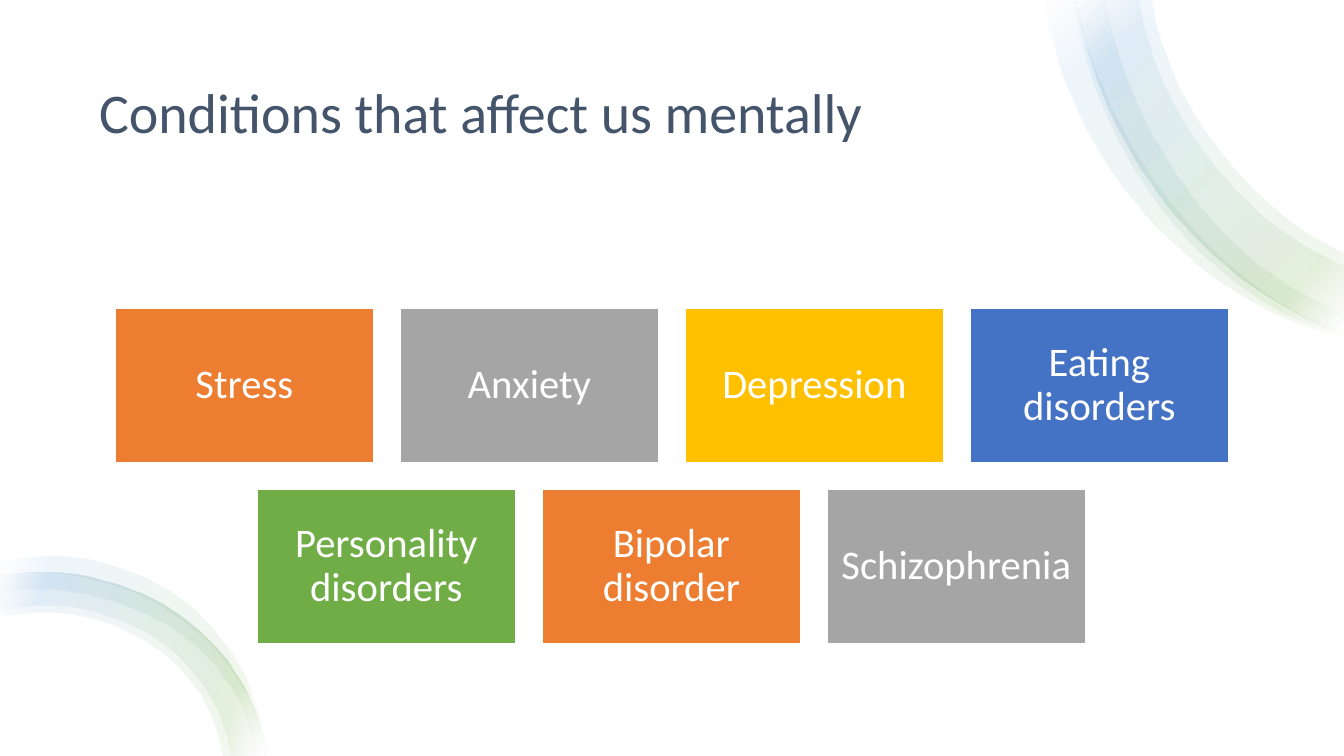
import dataclasses

import pptx
import pptx.dml.color
import pptx.enum.shapes
import pptx.enum.text
import pptx.oxml
import pptx.oxml.ns
import pptx.util

SCALE = 914400 / 100.8
WIDE, HIGH = 1344, 756


@dataclasses.dataclass(frozen=True)
class Theme:
    """Colours, font and type sizes of the slide."""
    font: str = "Calibri"
    head: int = 40
    body: int = 29
    ink: str = "44546A"
    white: str = "FFFFFF"
    orange: str = "ED7D31"
    grey: str = "A5A5A5"
    gold: str = "FFC000"
    blue: str = "4472C4"
    green: str = "70AD47"
    sky: str = "5B9BD5"
    alpha: int = 10


THEME = Theme()

ROWS = [
    [("Stress", THEME.orange), ("Anxiety", THEME.grey),
     ("Depression", THEME.gold), ("Eating disorders", THEME.blue)],
    [("Personality disorders", THEME.green), ("Bipolar disorder", THEME.orange),
     ("Schizophrenia", THEME.grey)],
]

TOP_BANDS = [
    ([(1045, 0), (1066, 155), (1189, 300), (1344, 338)],
     [(1078, 0), (1099, 136), (1215, 292), (1344, 331)]),
    ([(1077, 0), (1101, 147), (1199, 282), (1344, 335)],
     [(1152, 0), (1169, 116), (1268, 222), (1344, 253)]),
    ([(1074, 0), (1097, 156), (1202, 297), (1344, 336)],
     [(1107, 0), (1129, 144), (1238, 280), (1344, 310)]),
    ([(1077, 0), (1101, 147), (1199, 282), (1344, 335)],
     [(1140, 0), (1158, 129), (1263, 235), (1344, 266)]),
]

RIM = [(0, 577), (116, 553), (252, 630), (265, 756)]
LOW_BANDS = [
    (RIM, [(0, 618), (96, 595), (207, 651), (222, 756)]),
    (RIM, [(0, 611), (98, 588), (214, 645), (230, 756)]),
    (RIM, [(0, 593), (111, 573), (246, 645), (253, 756)]),
    ([(0, 563), (126, 534), (254, 617), (266, 756)],
     [(0, 577), (116, 556), (250, 634), (264, 756)]),
]


def px(num):
    """Turn pixels into EMU."""
    return pptx.util.Emu(round(num * SCALE))


def rgb(code):
    """Turn a hex code into a colour."""
    return pptx.dml.color.RGBColor.from_string(code)


def style(frame, size, color, align):
    """Format the text of a frame."""
    frame.word_wrap = True
    frame.vertical_anchor = pptx.enum.text.MSO_ANCHOR.MIDDLE
    for para in frame.paragraphs:
        para.alignment = align
        para.line_spacing = 0.9
        for run in para.runs:
            run.font.name = THEME.font
            run.font.size = pptx.util.Pt(size)
            run.font.color.rgb = rgb(color)


def add_title(slide, text):
    """Place and fill the title."""
    title = slide.shapes.title
    title.left, title.top = px(89), px(50)
    title.width, title.height = px(1166), px(131)
    title.text_frame.text = text
    style(title.text_frame, THEME.head, THEME.ink,
          pptx.enum.text.PP_ALIGN.LEFT)


def curve(ctrl, steps=32):
    """Return points along a cubic Bezier curve."""
    points = []
    for step in range(steps + 1):
        t = step / steps
        mix = ((1 - t) ** 3, 3 * t * (1 - t) ** 2, 3 * t * t * (1 - t), t ** 3)
        points.append(tuple(sum(m * p[axis] for m, p in zip(mix, ctrl))
                            for axis in (0, 1)))
    return points


def shade(shape, angle):
    """Give a shape the pale blue to green gradient."""
    shape.fill.gradient()
    shape.fill.gradient_angle = angle
    stops = next(shape.element.iter(pptx.oxml.ns.qn("a:gsLst")))
    for stop in list(stops):
        stops.remove(stop)
    space = pptx.oxml.ns.nsdecls("a")
    for place, color in ((0, THEME.white), (15, THEME.sky),
                         (84, THEME.green), (98, THEME.white)):
        stops.append(pptx.oxml.parse_xml(
            f'<a:gs {space} pos="{place * 1000}"><a:srgbClr val="{color}">'
            f'<a:alpha val="{THEME.alpha * 1000}"/></a:srgbClr></a:gs>'))


def add_band(slide, outer, inner, angle):
    """Draw a curved band between two edges."""
    points = curve(outer) + curve(inner)[::-1]
    pen = slide.shapes.build_freeform(*points[0], scale=SCALE)
    pen.add_line_segments(points[1:], close=True)
    band = pen.convert_to_shape()
    band.shadow.inherit = False
    band.line.fill.background()
    shade(band, angle)


def add_tile(slide, text, color, left, top, wide, high):
    """Draw one coloured tile with its label."""
    tile = slide.shapes.add_shape(pptx.enum.shapes.MSO_SHAPE.RECTANGLE,
                                  px(left), px(top), px(wide), px(high))
    tile.shadow.inherit = False
    tile.fill.solid()
    tile.fill.fore_color.rgb = rgb(color)
    tile.line.color.rgb = rgb(THEME.white)
    tile.line.width = pptx.util.Pt(1)
    frame = tile.text_frame
    frame.margin_left = frame.margin_right = px(12)
    frame.margin_top = frame.margin_bottom = px(12)
    frame.text = text
    style(frame, THEME.body, THEME.white, pptx.enum.text.PP_ALIGN.CENTER)


def add_tiles(slide, rows, top=308, wide=259, high=155, gap=26):
    """Lay out centred rows of tiles."""
    for line, row in enumerate(rows):
        left = (WIDE - len(row) * (wide + gap) + gap) // 2
        for col, (text, color) in enumerate(row):
            add_tile(slide, text, color, left + col * (wide + gap),
                     top + line * (high + gap), wide, high)


def main():
    """Build and save the slide."""
    deck = pptx.Presentation()
    deck.slide_width, deck.slide_height = px(WIDE), px(HIGH)
    slide = deck.slides.add_slide(deck.slide_layouts[5])
    slide.background.fill.solid()
    slide.background.fill.fore_color.rgb = rgb(THEME.white)
    add_title(slide, "Conditions that affect us mentally")
    for bands, angle in ((TOP_BANDS, 315), (LOW_BANDS, 340)):
        for outer, inner in bands:
            add_band(slide, outer, inner, angle)
    add_tiles(slide, ROWS)
    deck.save("out.pptx")


if __name__ == "__main__":
    main()
